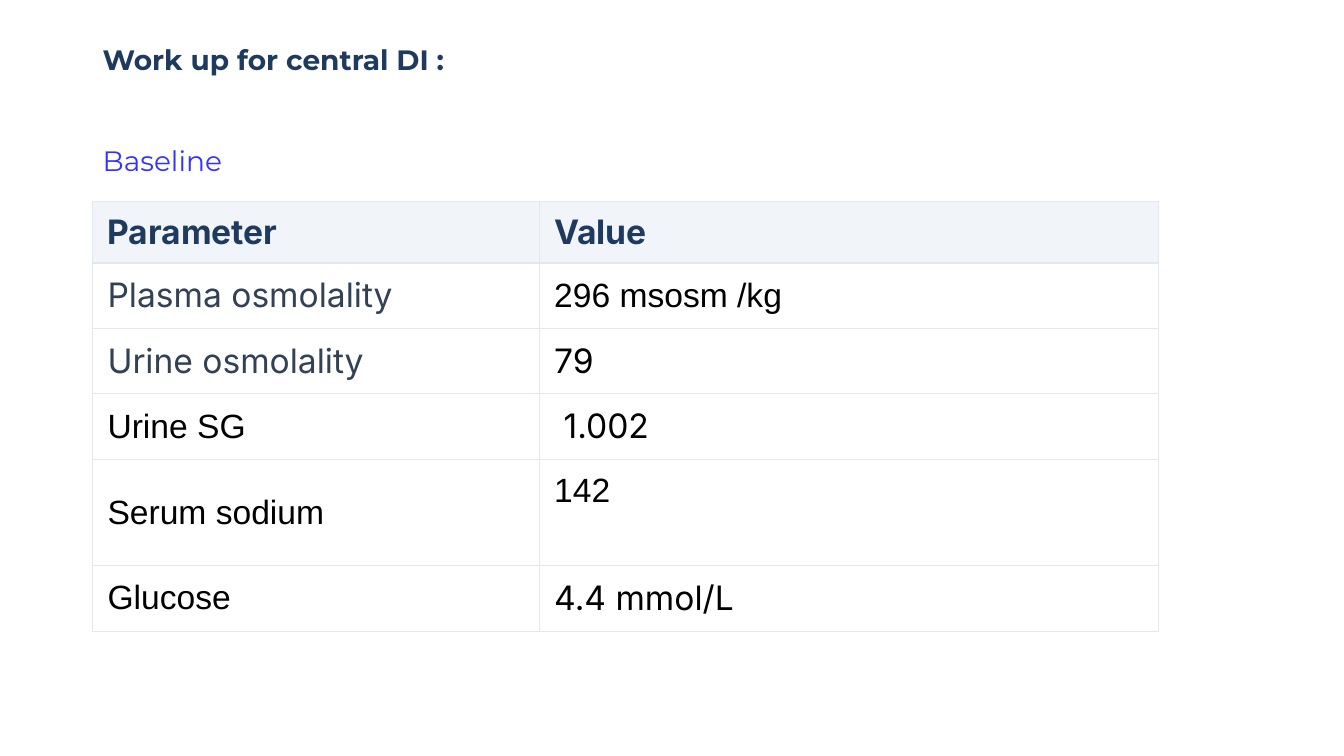
from dataclasses import dataclass

from lxml import etree
from pptx import Presentation
from pptx import util as u
from pptx.dml.color import RGBColor
from pptx.enum import text
from pptx.oxml.ns import qn

Pt = u.Pt


@dataclass(frozen=True)
class Theme:
    navy: str = "1E3A5F"
    slate: str = "334155"
    black: str = "000000"
    blue: str = "3333FF"
    header_fill: str = "F1F5F9"
    rule: str = "E2E8F0"
    heading_font: str = "Montserrat"
    inter: str = "Inter"
    arial: str = "Arial"
    heading_size: float = 20
    table_size: float = 24
    thin: float = 0.75
    thick: float = 1.5


THEME = Theme()
MIDDLE, TOP = text.MSO_ANCHOR.MIDDLE, text.MSO_ANCHOR.TOP

# Each row: height, then (wording, font, colour, anchor) for both cells
HEADER = (43.6, ("Parameter", THEME.inter, THEME.navy, MIDDLE),
          ("Value", THEME.inter, THEME.navy, MIDDLE))
RESULTS = [
    (46.9, ("Plasma osmolality", THEME.inter, THEME.slate, MIDDLE),
     ("296 msosm /kg", THEME.arial, THEME.black, MIDDLE)),
    (46.9, ("Urine osmolality", THEME.inter, THEME.slate, MIDDLE),
     ("79", THEME.inter, THEME.black, MIDDLE)),
    (46.9, ("Urine SG", THEME.arial, THEME.black, MIDDLE),
     (" 1.002", THEME.inter, THEME.black, MIDDLE)),
    (75.6, ("Serum sodium", THEME.arial, THEME.black, MIDDLE),
     ("142", THEME.arial, THEME.black, TOP)),
    (46.9, ("Glucose", THEME.arial, THEME.black, MIDDLE),
     ("4.4 mmol/L", THEME.inter, THEME.black, MIDDLE)),
]
COLUMN_SHARES = (0.419, 0.581)


def style(paragraph, font, size, colour, bold=False):
    paragraph.font.name = font
    paragraph.font.size = Pt(size)
    paragraph.font.bold = bold
    paragraph.font.color.rgb = RGBColor.from_string(colour)


def rule_cell(cell, widths):
    """Draw the cell's borders; widths maps the sides L, R, T, B to points."""
    properties = cell._tc.get_or_add_tcPr()
    for side, width in widths.items():
        line = etree.SubElement(properties, qn(f"a:ln{side}"), w=str(Pt(width)))
        fill = etree.SubElement(line, qn("a:solidFill"))
        etree.SubElement(fill, qn("a:srgbClr"), val=THEME.rule)


def fill_cell(cell, content, row_index):
    wording, font, colour, anchor = content
    is_header = row_index == 0
    cell.text = wording
    cell.vertical_anchor = anchor
    cell.margin_left = cell.margin_right = Pt(10.8)
    cell.margin_top = cell.margin_bottom = Pt(7.2 if is_header else 8.64)
    style(cell.text_frame.paragraphs[0], font, THEME.table_size, colour, is_header)
    rule_cell(cell, {
        "L": THEME.thin,
        "R": THEME.thin,
        "T": THEME.thick if row_index == 1 else THEME.thin,
        "B": THEME.thick if is_header else THEME.thin,
    })
    if is_header:
        cell.fill.solid()
        cell.fill.fore_color.rgb = RGBColor.from_string(THEME.header_fill)
    else:
        cell.fill.background()


def add_results(slide, left, top, width):
    rows = [HEADER, *RESULTS]
    height = sum(row[0] for row in rows)
    results = slide.shapes.add_table(
        len(rows), len(COLUMN_SHARES), Pt(left), Pt(top), Pt(width), Pt(height)).table
    results.first_row = results.horz_banding = False
    for column, share in zip(results.columns, COLUMN_SHARES):
        column.width = Pt(width * share)
    for row_index, (row_height, *contents) in enumerate(rows):
        results.rows[row_index].height = Pt(row_height)
        for column_index, content in enumerate(contents):
            fill_cell(results.cell(row_index, column_index), content, row_index)


def add_heading(slide, left, top, width, height):
    frame = slide.shapes.add_textbox(Pt(left), Pt(top), Pt(width), Pt(height)).text_frame
    frame.word_wrap = True
    title = frame.paragraphs[0]
    title.text = "Work up for central DI :"
    style(title, THEME.heading_font, THEME.heading_size, THEME.navy, bold=True)
    subtitle = frame.add_paragraph()
    subtitle.text = "Baseline"
    subtitle.space_before = Pt(48)
    style(subtitle, THEME.heading_font, THEME.heading_size, THEME.blue)


def main():
    deck = Presentation()
    deck.slide_width, deck.slide_height = Pt(960), Pt(540)
    slide = deck.slides.add_slide(deck.slide_layouts[6])
    add_results(slide, left=66, top=144, width=761.5)
    add_heading(slide, left=66.24, top=26.64, width=606.24, height=147.6)
    deck.save("out.pptx")


if __name__ == "__main__":
    main()
